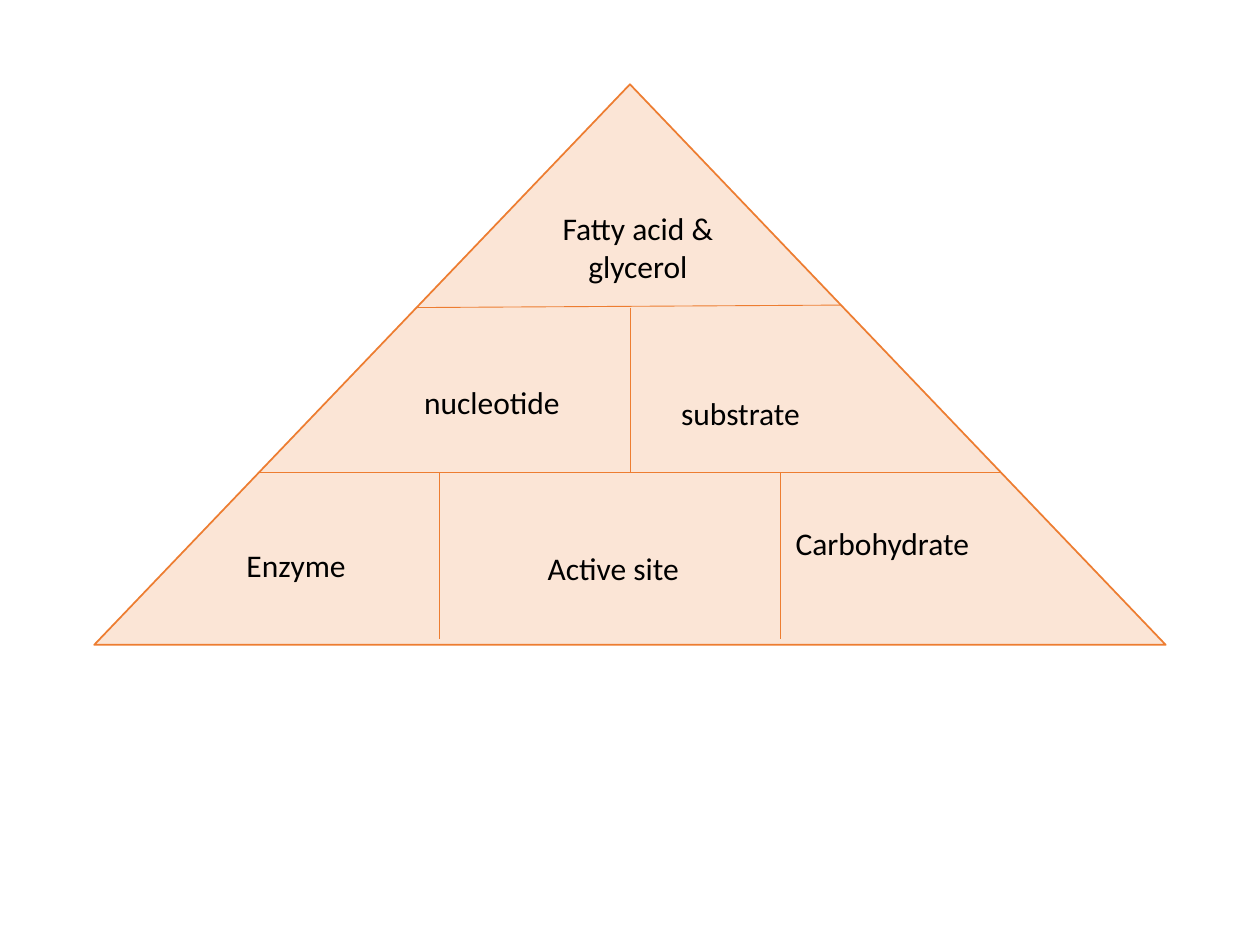
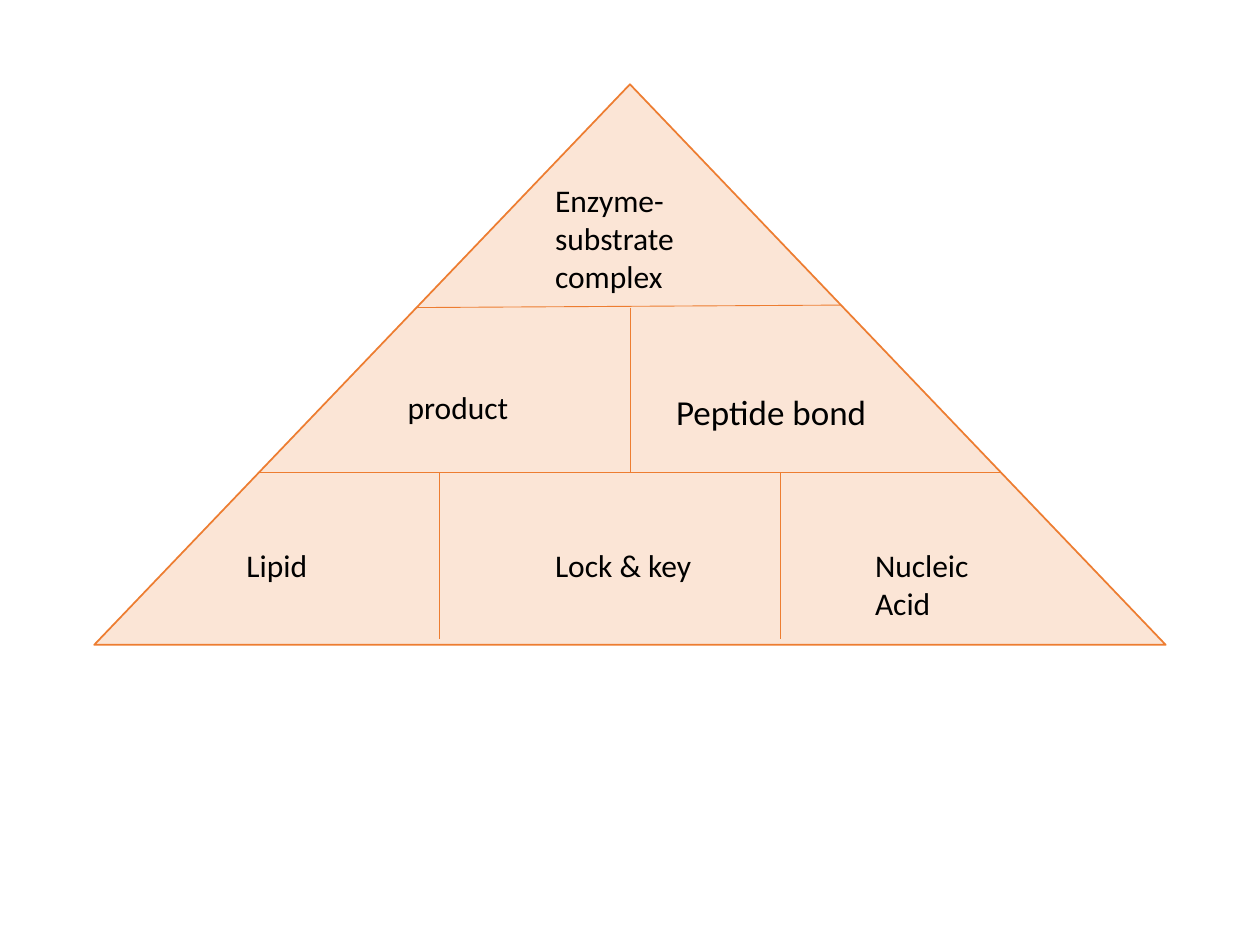
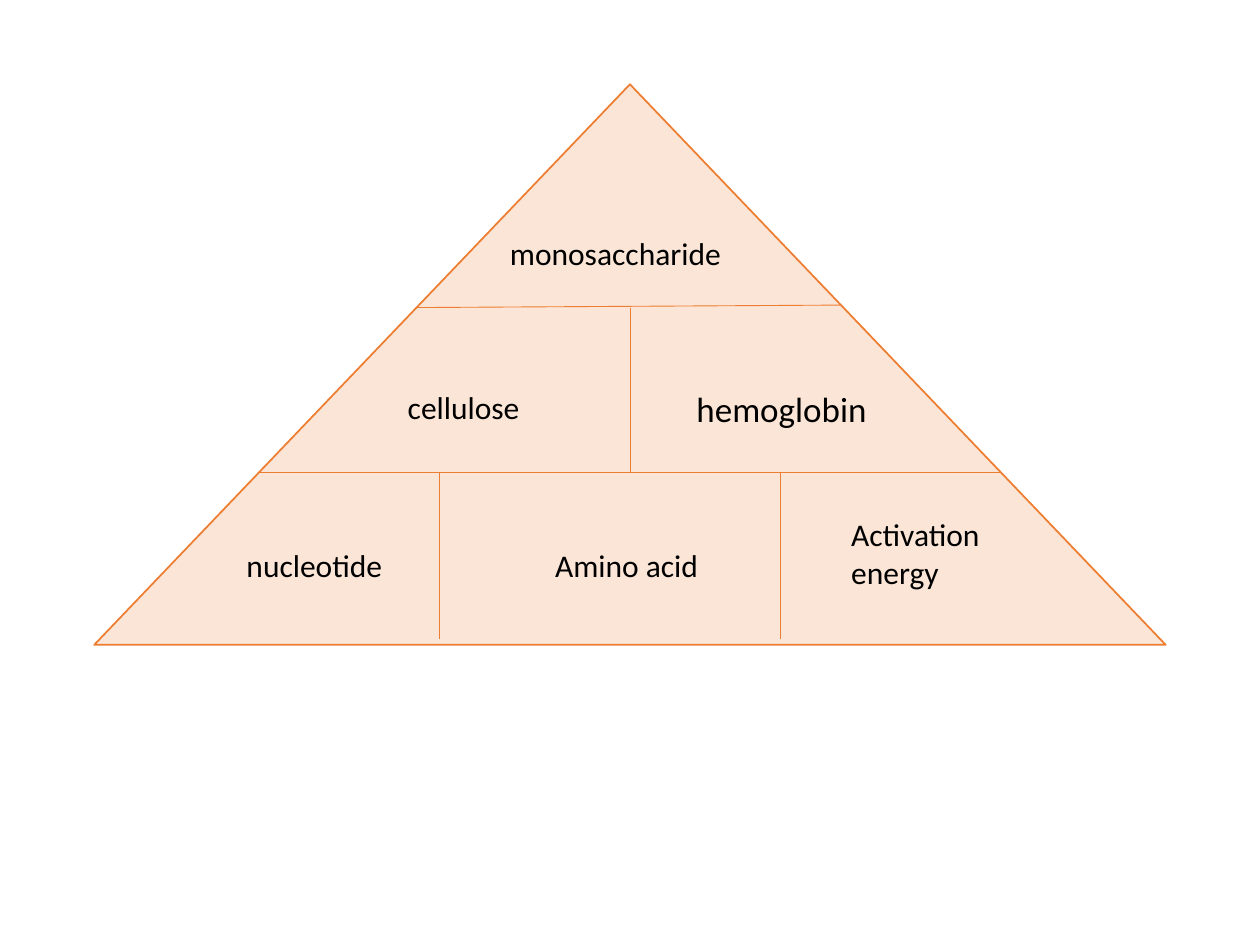
from lxml.etree import SubElement
from pptx import Presentation
from pptx.dml.color import RGBColor
from pptx.enum.shapes import MSO_CONNECTOR, MSO_SHAPE
from pptx.enum.text import MSO_AUTO_SIZE, PP_ALIGN
from pptx.oxml.ns import qn
from pptx.util import Cm, Pt

ORANGE, PEACH, BLACK = "ED7D31", "FBE5D6", "000000"
FONT = "Calibri"
PYRAMID = (1.9, 1.7, 21.6, 11.3)  # left, top, width, height in cm
UPPER_LEFT, UPPER_RIGHT, LOWER, FOOT = 4.5, 4.45, 7.82, 11.18  # depths below the apex
LOWER_DIVIDERS = (6.96, 13.84)

# Each label: text, left, top and width inside the pyramid, then any format values
SLIDES = [
    [
        ("Enzyme", 2.82, 9.19, 4.42, {}),
        ("Carbohydrate", 13.89, 8.74, 4.39, {}),
        ("Active site", 8.89, 9.25, 3.86, {}),
        ("substrate", 11.58, 6.12, 4.5, {}),
        ("Fatty acid & glycerol", 8.89, 2.39, 4.14, {"lines": 2, "align": PP_ALIGN.CENTER}),
        ("nucleotide", 6.4, 5.89, 4.42, {}),
    ],
    [
        ("Lipid", 2.82, 9.19, 4.42, {}),
        ("Nucleic Acid", 15.49, 9.19, 2.79, {"lines": 2}),
        ("product", 6.07, 5.99, 3.86, {}),
        ("Peptide bond", 11.48, 6.05, 4.5, {"size": 20}),
        ("Enzyme-substrate complex", 9.04, 1.83, 3.73, {"lines": 3}),
        ("Lock & key", 9.04, 9.19, 4.42, {}),
    ],
    [
        ("nucleotide", 2.82, 9.19, 4.42, {}),
        ("Activation energy", 15.01, 8.56, 3.28, {"lines": 2}),
        ("cellulose", 6.07, 5.99, 3.86, {}),
        ("hemoglobin", 11.89, 5.99, 4.5, {"size": 20}),
        ("monosaccharide", 8.13, 2.9, 4.88, {}),
        ("Amino acid", 9.04, 9.19, 4.42, {}),
    ],
]


def rgb(color):
    return RGBColor.from_string(color)


def add_line(slide, x1, y1, x2, y2):
    line = slide.shapes.add_connector(
        MSO_CONNECTOR.STRAIGHT, Cm(x1), Cm(y1), Cm(x2), Cm(y2))
    line.line.color.rgb = rgb(ORANGE)
    line.line.width = Pt(0.5)
    SubElement(line._element.spPr, qn("a:effectLst"))


def add_label(slide, text, left, top, width, size=18, lines=1, align=PP_ALIGN.LEFT):
    height = 0.25 + lines * size * 1.2 * 2.54 / 72
    sp = slide.shapes.add_textbox(Cm(left), Cm(top), Cm(width), Cm(height))
    tf = sp.text_frame
    tf.word_wrap = True
    tf.auto_size = MSO_AUTO_SIZE.SHAPE_TO_FIT_TEXT
    p = tf.paragraphs[0]
    p.alignment = align
    r = p.add_run()
    r.text = text
    for name, value in {"name": FONT, "size": Pt(size)}.items():
        setattr(r.font, name, value)
    r.font.color.rgb = rgb(BLACK)


def add_pyramid(slide, box):
    """Draw the triangle and the lines that split it into six cells."""
    left, top, width, height = box
    sp = slide.shapes.add_shape(
        MSO_SHAPE.ISOSCELES_TRIANGLE, *(Cm(v) for v in box))
    sp.shadow.inherit = False
    sp.fill.solid()
    sp.fill.fore_color.rgb = rgb(PEACH)
    sp.line.color.rgb = rgb(ORANGE)
    sp.line.width = Pt(1)

    middle = width / 2
    slope = middle / height
    lines = [
        (middle - slope * UPPER_LEFT, UPPER_LEFT, middle + slope * UPPER_RIGHT, UPPER_RIGHT),
        (middle - slope * LOWER, LOWER, middle + slope * LOWER, LOWER),
        (middle, UPPER_LEFT, middle, LOWER),
    ]
    lines += [(x, LOWER, x, FOOT) for x in LOWER_DIVIDERS]
    for x1, y1, x2, y2 in lines:
        add_line(slide, left + x1, top + y1, left + x2, top + y2)


def add_pyramid_slide(prs, labels, box):
    slide = prs.slides.add_slide(prs.slide_layouts[6])
    add_pyramid(slide, box)
    for text, x, y, width, formats in labels:
        add_label(slide, text, box[0] + x, box[1] + y, width, **formats)


def main():
    prs = Presentation()
    prs.slide_width, prs.slide_height = Cm(25.4), Cm(19.05)
    for labels in SLIDES:
        add_pyramid_slide(prs, labels, PYRAMID)
    prs.save("out.pptx")


if __name__ == "__main__":
    main()
